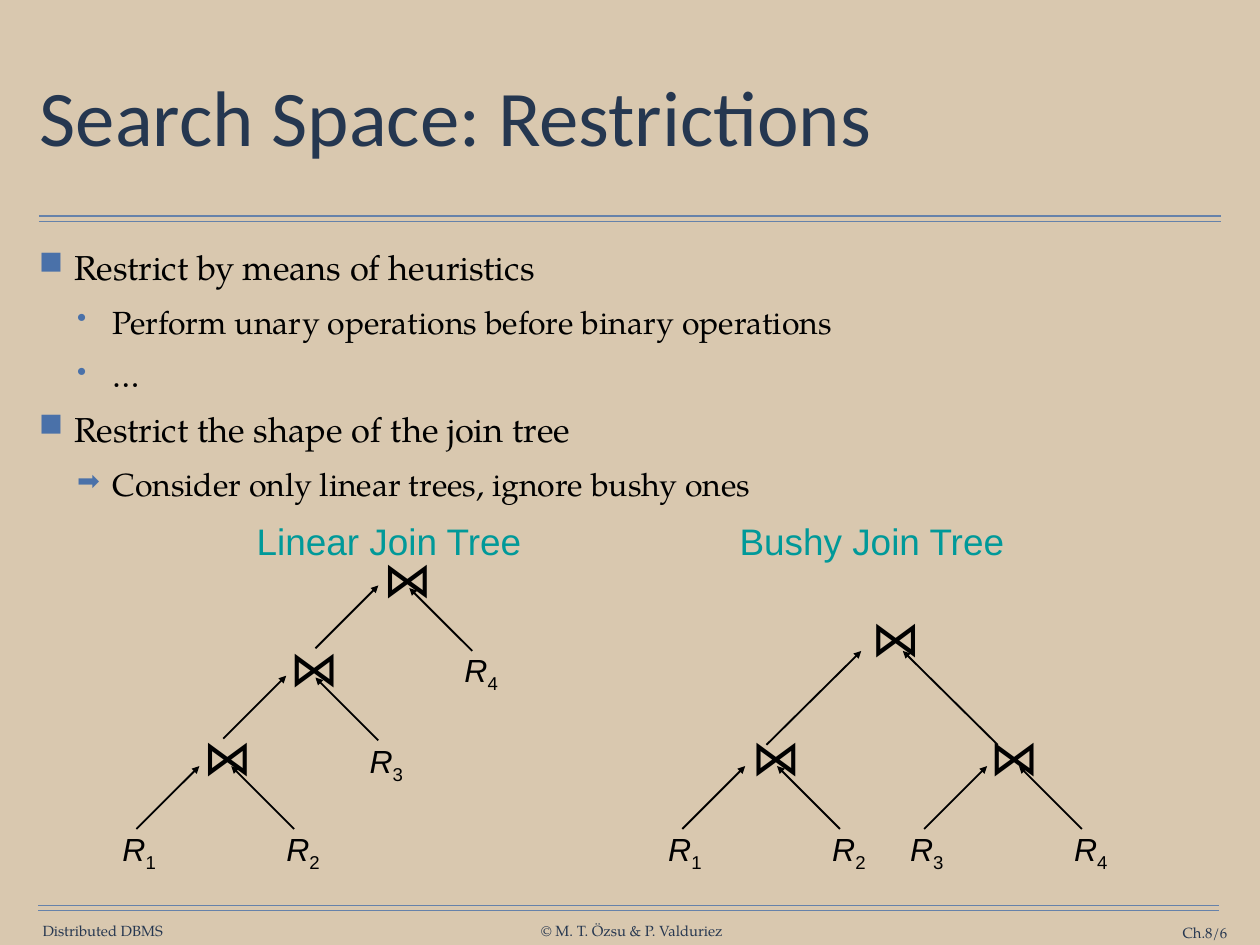
from lxml import etree
from pptx import Presentation
from pptx import util as u
from pptx.dml.color import RGBColor
from pptx.enum import shapes, text
from pptx.oxml import ns

SERIF, SANS, SYMBOL = "TeX Gyre Pagella", "Arial", "Noto Sans CJK JP"
NAVY, RULE, BULLET, TEAL, BLACK = "263750", "6682AA", "4A71A9", "009999", "000000"
LEFT, CENTER, RIGHT = text.PP_ALIGN.LEFT, text.PP_ALIGN.CENTER, text.PP_ALIGN.RIGHT
TOP, MIDDLE = text.MSO_ANCHOR.TOP, text.MSO_ANCHOR.MIDDLE


def color(value):
    return RGBColor.from_string(value)


def add_text(place, words, font, size, ink, subscript="", align=CENTER,
             anchor=TOP, wrap=False, inset=(0.14, 0.07)):
    """Add a text box with one paragraph per string and return its paragraphs."""
    frame = page.shapes.add_textbox(*map(u.Inches, place)).text_frame
    across, down = map(u.Inches, inset)
    layout = {"word_wrap": wrap, "vertical_anchor": anchor,
              "margin_left": across, "margin_right": across,
              "margin_top": down, "margin_bottom": down}
    for name, value in layout.items():
        setattr(frame, name, value)
    for index, line in enumerate(words):
        para = frame.paragraphs[0] if index == 0 else frame.add_paragraph()
        para.alignment = align
        for part in filter(None, (line, subscript)):
            span = para.add_run()
            span.text = part
            style = {"name": font, "size": u.Pt(size)}
            if subscript:
                style["italic"] = part == line
            for name, value in style.items():
                setattr(span.font, name, value)
            span.font.color.rgb = color(ink)
            properties = span._r.get_or_add_rPr()
            etree.SubElement(properties, ns.qn("a:ea"), typeface=font)
            if part == subscript:
                properties.set("baseline", "-25000")
    return frame.paragraphs


deck = Presentation()
deck.slide_width, deck.slide_height = u.Inches(14.22), u.Inches(10.67)
page = deck.slides.add_slide(deck.slide_layouts[6])
page.background.fill.solid()
page.background.fill.fore_color.rgb = color("D9C8AF")

# Double rules above and below the content
lines = []
for left, right, top in [(0.44, 13.78, 2.44), (0.43, 13.76, 10.22)]:
    for y in (top, top + 0.06):
        lines.append((left, y, right, y, RULE, 1))

# Footer
for place, words, align, wrap in [
    ((0.47, 10.41, 1.38, 0.2), "Distributed DBMS", CENTER, False),
    ((6.09, 10.41, 2.08, 0.2), "© M. T. Özsu & P. Valduriez", CENTER, False),
    ((12.31, 10.43, 1.54, 0.2), "Ch.8/6", RIGHT, True),
]:
    add_text(place, [words], SERIF, 12, NAVY, align=align, anchor=MIDDLE,
             wrap=wrap, inset=(0, 0))

# Title
title = add_text((0.39, 0.49, 13.44, 1.76), ["Search Space: Restrictions"], "Calibri",
                 64, "253750", align=LEFT, anchor=MIDDLE, wrap=True, inset=(0.06, 0.06))
title[0].line_spacing = 0.9

# Bulleted body
points = [
    ("■", "Restrict by means of heuristics"),
    ("•", "Perform unary operations before binary operations"),
    ("•", "…"),
    ("■", "Restrict the shape of the join tree"),
    ("➡", "Consider only linear trees, ignore bushy ones"),
]
body = add_text((0.38, 2.72, 13.44, 7.4), [words for _, words in points], SERIF, 28,
                BLACK, align=LEFT, wrap=True, inset=(0.06, 0.06))
for index, (para, (mark, _)) in enumerate(zip(body, points)):
    main = mark == "■"
    para.level = 0 if main else 1
    para.space_before = u.Pt(12 if index else 0)
    properties = para._p.get_or_add_pPr()
    properties.set("marL", str(u.Inches(0.4 if main else 0.83)))
    properties.set("indent", str(u.Inches(-0.4)))
    tint = etree.SubElement(properties, ns.qn("a:buClr"))
    etree.SubElement(tint, ns.qn("a:srgbClr"), val=BULLET)
    etree.SubElement(properties, ns.qn("a:buSzPct"), val="95000" if main else "85000")
    etree.SubElement(properties, ns.qn("a:buChar"), char=mark)
    para.runs[0].font.size = u.Pt(28 if main else 26)

# Tree headings
for left, heading in [(2.74, "Linear Join Tree"), (8.19, "Bushy Join Tree")]:
    add_text((left, 5.79, 3.3, 0.65), [heading], SANS, 30, TEAL)

# Lowest joins: two relations, each with an arrow up to the join
relations = [(3.98, 8.3, "3"), (5.05, 7.28, "4")]
arrows = [
    (2.52, 8.34, 3.23, 7.63), (4.27, 8.36, 3.56, 7.65),
    (3.56, 7.32, 4.27, 6.61), (5.33, 7.35, 4.62, 6.64),
    (8.65, 8.41, 9.72, 7.35), (11.26, 8.41, 10.19, 7.35),
]
for foot, first, second in [(1.54, "1", "2"), (7.7, "1", "2"), (10.43, "3", "4")]:
    relations += [(foot - 0.35, 9.3, first), (foot + 1.5, 9.3, second)]
    arrows += [(foot, 9.36, foot + 0.71, 8.65),
               (foot + 1.78, 9.36, foot + 1.07, 8.65)]
for left, top, number in relations:
    add_text((left, top, 0.76, 0.58), ["R"], SANS, 26, BLACK, subscript=number)

# Rules and arrows
lines += [(*ends, BLACK, 1.5) for ends in arrows]
for *ends, ink, weight in lines:
    line = page.shapes.add_connector(shapes.MSO_CONNECTOR.STRAIGHT, *map(u.Inches, ends))
    line.line.color.rgb = color(ink)
    line.line.width = u.Pt(weight)
    if ink == BLACK:
        etree.SubElement(line.line._get_or_add_ln(), ns.qn("a:tailEnd"), type="triangle")
    etree.SubElement(line._element.spPr, ns.qn("a:effectLst"))

# Join symbols
for left, top in [(4.18, 6.12), (3.13, 7.13), (2.15, 8.13),
                  (9.69, 6.79), (8.34, 8.13), (11.03, 8.13)]:
    add_text((left, top, 0.57, 0.81), ["⋈"], SYMBOL, 40, BLACK)

deck.save("out.pptx")
